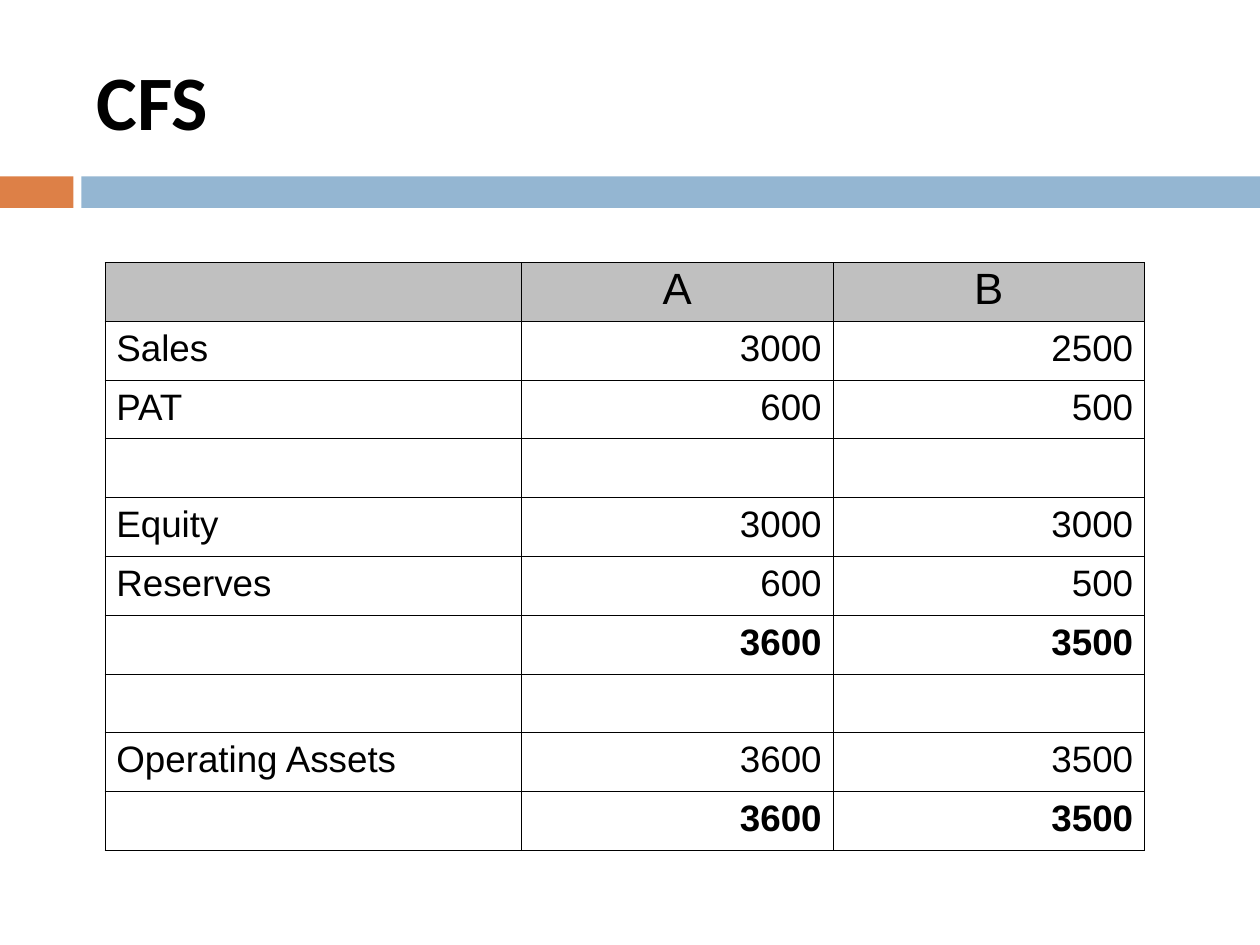
from lxml.etree import SubElement
from pptx import Presentation
from pptx.dml.color import RGBColor
from pptx.enum.shapes import MSO_SHAPE
from pptx.enum.text import MSO_ANCHOR, PP_ALIGN
from pptx.oxml.ns import qn
from pptx.util import Pt

HEADING = "CFS"
HEADER = ("", "A", "B")
ACCOUNTS = [
    ("Sales", "3000", "2500"),
    ("PAT", "600", "500"),
    ("", "", ""),
    ("Equity", "3000", "3000"),
    ("Reserves", "600", "500"),
    ("", "3600", "3500"),
    ("", "", ""),
    ("Operating Assets", "3600", "3500"),
    ("", "3600", "3500"),
]
BANDS = [(0, 42, "DD8047"), (46.5, 673.5, "94B6D2")]
COLUMN_WIDTHS = (238, 178, 178)
ROW_HEIGHT = 33.6


def paint(fill, color):
    fill.solid()
    fill.fore_color.rgb = RGBColor.from_string(color)


def style_font(font, name, size, bold):
    font.name, font.size, font.bold = name, Pt(size), bold
    paint(font.fill, "000000")


def add_borders(cell):
    properties = cell._tc.get_or_add_tcPr()
    for side in ("lnL", "lnR", "lnT", "lnB"):
        border = SubElement(properties, qn(f"a:{side}"), w=str(Pt(0.57)))
        ink = SubElement(border, qn("a:solidFill"))
        SubElement(ink, qn("a:srgbClr"), val="000000")


def fill_cell(cell, text, align, size, bold, top):
    cell.vertical_anchor = MSO_ANCHOR.MIDDLE
    cell.margin_left = cell.margin_right = Pt(6.5)
    cell.margin_top, cell.margin_bottom = Pt(top), Pt(3.6)
    cell.text = text
    paragraph = cell.text_frame.paragraphs[0]
    paragraph.alignment = align
    paragraph.line_spacing = 0.76
    paragraph.space_after = Pt(14.2)
    style_font(paragraph.font, "Arial", size, bold)


prs = Presentation()
prs.slide_width, prs.slide_height = Pt(720), Pt(540)
slide = prs.slides.add_slide(prs.slide_layouts[5])

for left, width, color in BANDS:
    band = slide.shapes.add_shape(
        MSO_SHAPE.RECTANGLE, Pt(left), Pt(100.8), Pt(width), Pt(18))
    band.shadow.inherit = False
    paint(band.fill, color)
    band.line.fill.background()

heading = slide.shapes.title
heading.left, heading.top = Pt(48), Pt(18)
heading.width, heading.height = Pt(642), Pt(78)
heading.text = HEADING
heading.text_frame.vertical_anchor = MSO_ANCHOR.MIDDLE
heading_line = heading.text_frame.paragraphs[0]
heading_line.alignment = PP_ALIGN.LEFT
style_font(heading_line.font, "Calibri", 44, True)

rows = [HEADER, *ACCOUNTS]
statement = slide.shapes.add_table(
    len(rows), len(HEADER), Pt(60), Pt(150),
    Pt(sum(COLUMN_WIDTHS)), Pt(ROW_HEIGHT * len(rows))).table
statement.first_row = statement.horz_banding = False
for column, width in zip(statement.columns, COLUMN_WIDTHS):
    column.width = Pt(width)

for r, row in enumerate(rows):
    statement.rows[r].height = Pt(ROW_HEIGHT)
    is_header = r == 0
    is_total = not is_header and not row[0]
    for c, text in enumerate(row):
        cell = statement.cell(r, c)
        add_borders(cell)
        if is_header:
            paint(cell.fill, "C0C0C0")
        else:
            cell.fill.background()
        if text:
            align = (PP_ALIGN.CENTER if is_header
                     else PP_ALIGN.RIGHT if c else PP_ALIGN.LEFT)
            fill_cell(cell, text, align, 25 if is_header else 21,
                      is_total, 5.8 if is_header else 5)

prs.save("out.pptx")
